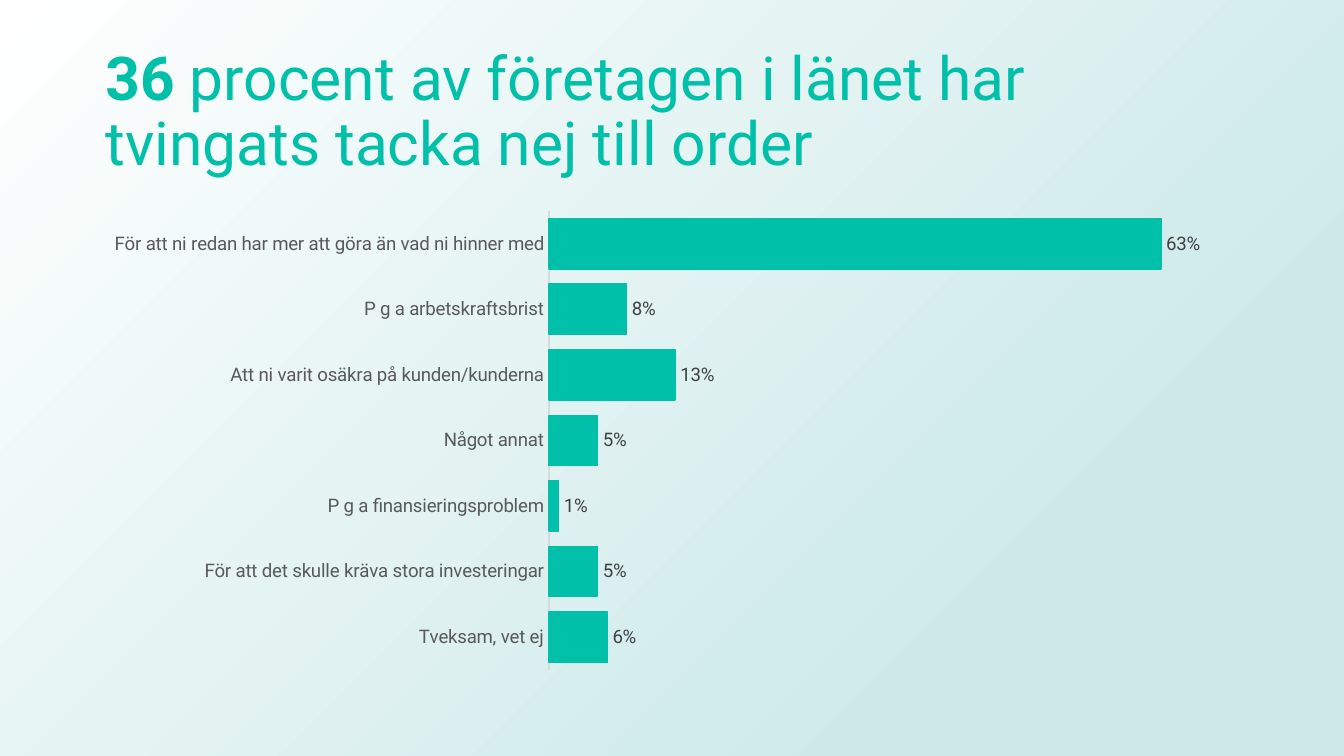
import lxml.etree
import pptx
import pptx.chart.data
import pptx.dml.color
import pptx.enum.chart
import pptx.enum.shapes
import pptx.enum.text
import pptx.util

PX = 914400 / 134.4  # EMU per pixel

THEME = {
    "teal": pptx.dml.color.RGBColor(0x00, 0xC0, 0xA9),
    "axis_line": pptx.dml.color.RGBColor(0xD9, 0xD9, 0xD9),
    "axis_text": pptx.dml.color.RGBColor(0x59, 0x59, 0x59),
    "label_text": pptx.dml.color.RGBColor(0x40, 0x40, 0x40),
    "gradient_start": "CDEAE9",
    "gradient_end": "FFFFFF",
    "font": "Roboto",
    "title_size": pptx.util.Pt(32.4),
    "chart_size": pptx.util.Pt(10),
    "line_width": pptx.util.Pt(0.75),
}


def box(*lengths):
    return [round(length * PX) for length in lengths]


def style_font(font, size, color):
    font.name = THEME["font"]
    font.size = size
    font.color.rgb = color


presentation = pptx.Presentation()
presentation.slide_width, presentation.slide_height = box(1344, 756)
slide = presentation.slides.add_slide(presentation.slide_layouts[5])

# Background: radial gradient centred on the bottom right corner
background = slide.shapes.add_shape(
    pptx.enum.shapes.MSO_SHAPE.RECTANGLE, *box(0, 0, 1344, 756))
background.shadow.inherit = False
background.line.fill.background()
background.fill.solid()
solid_fill = background.element.spPr.find(
    "{http://schemas.openxmlformats.org/drawingml/2006/main}solidFill")
gradient = lxml.etree.fromstring(f"""
<a:gradFill xmlns:a="http://schemas.openxmlformats.org/drawingml/2006/main" rotWithShape="1">
  <a:gsLst>
    <a:gs pos="23000"><a:srgbClr val="{THEME['gradient_start']}"/></a:gs>
    <a:gs pos="100000"><a:srgbClr val="{THEME['gradient_end']}"/></a:gs>
  </a:gsLst>
  <a:path path="circle"><a:fillToRect l="100000" t="100000"/></a:path>
</a:gradFill>""")
background.element.spPr.replace(solid_fill, gradient)
slide.shapes.element.insert(2, background.element)  # behind the title

# Title
title = slide.shapes.title
title.left, title.top, title.width, title.height = box(92, 40, 1159, 147)
frame = title.text_frame
frame.word_wrap = True
frame.auto_size = pptx.enum.text.MSO_AUTO_SIZE.NONE
frame.vertical_anchor = pptx.enum.text.MSO_ANCHOR.MIDDLE
paragraph = frame.paragraphs[0]
paragraph.alignment = pptx.enum.text.PP_ALIGN.LEFT
paragraph.line_spacing = 0.9
for text, bold in [
    ("36 ", True),
    ("procent av företagen i länet har tvingats tacka nej till order", False),
]:
    run = paragraph.add_run()
    run.text = text
    run.font.bold = bold
    style_font(run.font, THEME["title_size"], THEME["teal"])

# Bar chart of reasons
reasons = {
    "För att ni redan har mer att göra än vad ni hinner med": 0.63,
    "P g a arbetskraftsbrist": 0.08,
    "Att ni varit osäkra på kunden/kunderna": 0.13,
    "Något annat": 0.05,
    "P g a finansieringsproblem": 0.01,
    "För att det skulle kräva stora investeringar": 0.05,
    "Tveksam, vet ej": 0.06,
}
chart_data = pptx.chart.data.CategoryChartData(number_format="0%")
chart_data.categories = list(reasons)
chart_data.add_series("Series 1", list(reasons.values()))
chart_left, chart_top, chart_width, chart_height = 92, 202, 1159, 478
chart = slide.shapes.add_chart(
    pptx.enum.chart.XL_CHART_TYPE.BAR_CLUSTERED,
    *box(chart_left, chart_top, chart_width, chart_height), chart_data).chart
chart.has_legend = False
chart.has_title = False
chart.font.name = THEME["font"]
chart.font.size = THEME["chart_size"]

# Axes
category_axis = chart.category_axis
category_axis.reverse_order = True
category_axis.major_tick_mark = pptx.enum.chart.XL_TICK_MARK.NONE
category_axis.format.line.color.rgb = THEME["axis_line"]
category_axis.format.line.width = THEME["line_width"]
style_font(category_axis.tick_labels.font, THEME["chart_size"], THEME["axis_text"])
value_axis = chart.value_axis
value_axis.visible = False
value_axis.has_major_gridlines = False
value_axis.minimum_scale = 0
value_axis.maximum_scale = 0.7

# Bars and their labels
plot = chart.plots[0]
plot.gap_width = 30
plot.vary_by_categories = False
series = plot.series[0]
series.format.fill.solid()
series.format.fill.fore_color.rgb = THEME["teal"]
series.format.line.color.rgb = THEME["teal"]
series.format.line.width = THEME["line_width"]
labels = series.data_labels
labels.show_value = True
labels.number_format = "0%"
labels.number_format_is_linked = False
labels.position = pptx.enum.chart.XL_LABEL_POSITION.OUTSIDE_END
style_font(labels.font, THEME["chart_size"], THEME["label_text"])

# Inner plot area, as shares of the chart frame
shares = {
    "x": (549 - chart_left) / chart_width,
    "y": (211 - chart_top) / chart_height,
    "w": 680 / chart_width,
    "h": 459 / chart_height,
}
modes = "".join(f'<c:{name}Mode val="edge"/>' for name in "xy")
values = "".join(f'<c:{name} val="{share:.4f}"/>' for name, share in shares.items())
layout = lxml.etree.fromstring(
    '<c:layout xmlns:c="http://schemas.openxmlformats.org/drawingml/2006/chart">'
    f'<c:manualLayout><c:layoutTarget val="inner"/>{modes}{values}'
    "</c:manualLayout></c:layout>")
plot_area = chart.element.chart.plotArea
for old_layout in plot_area.findall(layout.tag):
    plot_area.remove(old_layout)
plot_area.insert(0, layout)

presentation.save("out.pptx")
